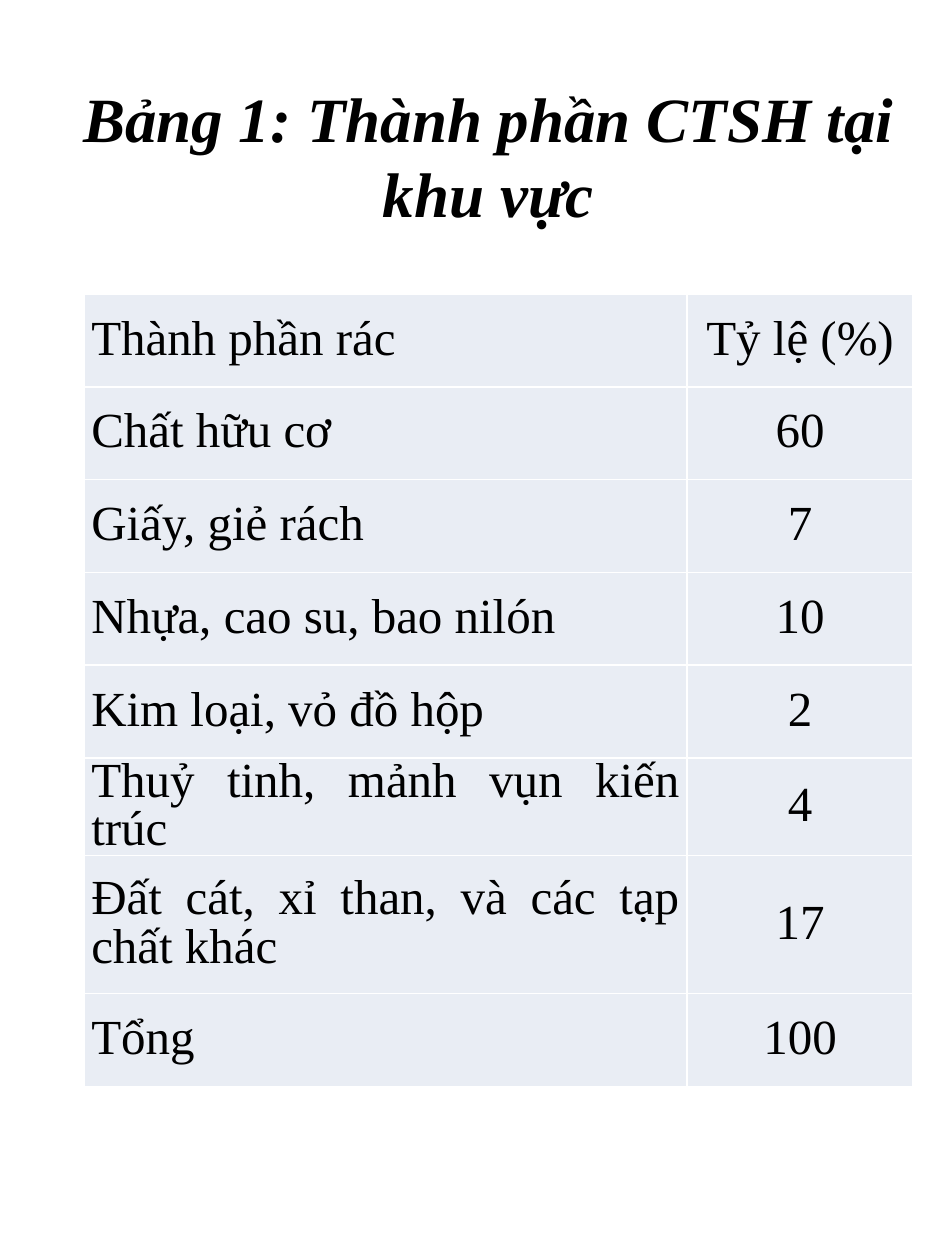
from dataclasses import dataclass

from lxml import etree
from pptx import Presentation
from pptx.dml import color
from pptx.enum import text
from pptx.oxml import ns
from pptx.util import Cm, Inches, Pt


@dataclass(frozen=True)
class Theme:
    font: str = "Times New Roman"
    ink: str = "000000"
    cell: str = "E9EDF4"
    border: str = "FFFFFF"
    title_size: int = 36
    cell_size: int = 28
    border_width: int = 1


@dataclass(frozen=True)
class WasteRow:
    component: str
    share: str
    height: float = 1.87


THEME = Theme()
COLUMN_WIDTHS = (12.16, 4.56)
COLUMN_ALIGNMENTS = (text.PP_ALIGN.JUSTIFY, text.PP_ALIGN.CENTER)
WASTE_ROWS = (
    WasteRow("Thành phần rác", "Tỷ lệ (%)"),
    WasteRow("Chất hữu cơ", "60"),
    WasteRow("Giấy, giẻ rách", "7"),
    WasteRow("Nhựa, cao su, bao nilón", "10"),
    WasteRow("Kim loại, vỏ đồ hộp", "2"),
    WasteRow("Thuỷ tinh, mảnh vụn kiến trúc", "4"),
    WasteRow("Đất cát, xỉ than, và các tạp chất khác", "17", 2.78),
    WasteRow("Tổng", "100"),
)


def apply(target, formats: dict) -> None:
    for name, value in formats.items():
        setattr(target, name, value)


def style_font(font, size: int, emphasis: bool = False) -> None:
    apply(font, {"name": THEME.font, "size": Pt(size),
                 "bold": emphasis, "italic": emphasis})
    font.color.rgb = color.RGBColor.from_string(THEME.ink)


def add_borders(cell) -> None:
    properties = cell._tc.get_or_add_tcPr()
    for side in ("lnL", "lnR", "lnT", "lnB"):
        line = etree.SubElement(properties, ns.qn(f"a:{side}"),
                                w=str(Pt(THEME.border_width)))
        fill = etree.SubElement(line, ns.qn("a:solidFill"))
        etree.SubElement(fill, ns.qn("a:srgbClr"), val=THEME.border)


def fill_cell(cell, wording: str, alignment: text.PP_ALIGN) -> None:
    cell.text = wording
    apply(cell, {"margin_left": Cm(0.15), "margin_right": Cm(0.15),
                 "margin_top": 0, "margin_bottom": 0,
                 "vertical_anchor": text.MSO_ANCHOR.MIDDLE})
    add_borders(cell)
    cell.fill.solid()
    cell.fill.fore_color.rgb = color.RGBColor.from_string(THEME.cell)
    paragraph = cell.text_frame.paragraphs[0]
    apply(paragraph, {"alignment": alignment, "line_spacing": 0.9,
                      "space_after": Pt(8)})
    style_font(paragraph.runs[0].font, THEME.cell_size)


def add_heading(slide, wording: str) -> None:
    heading = slide.shapes.title
    apply(heading, {"left": Cm(1.27), "top": Cm(1.6),
                    "width": Cm(17.15), "height": Cm(4.33)})
    frame = heading.text_frame
    frame.text = wording
    apply(frame, {"word_wrap": True, "auto_size": text.MSO_AUTO_SIZE.NONE,
                  "vertical_anchor": text.MSO_ANCHOR.TOP, "margin_top": 0})
    paragraph = frame.paragraphs[0]
    paragraph.alignment = text.PP_ALIGN.CENTER
    style_font(paragraph.runs[0].font, THEME.title_size, emphasis=True)


def add_waste_table(slide, rows: tuple[WasteRow, ...]) -> None:
    composition = slide.shapes.add_table(
        len(rows), len(COLUMN_WIDTHS), Cm(1.69), Cm(5.93),
        Cm(sum(COLUMN_WIDTHS)), Cm(sum(row.height for row in rows))).table
    apply(composition, {"first_row": False, "horz_banding": False})
    for column, width in zip(composition.columns, COLUMN_WIDTHS):
        column.width = Cm(width)
    for table_row, waste in zip(composition.rows, rows):
        table_row.height = Cm(waste.height)
        for cell, wording, alignment in zip(
                table_row.cells, (waste.component, waste.share), COLUMN_ALIGNMENTS):
            fill_cell(cell, wording, alignment)


def main() -> None:
    deck = Presentation()
    apply(deck, {"slide_width": Inches(7.5), "slide_height": Inches(10)})
    slide = deck.slides.add_slide(deck.slide_layouts.get_by_name("Title Only"))
    add_heading(slide, "Bảng 1: Thành phần CTSH tại khu vực")
    add_waste_table(slide, WASTE_ROWS)
    deck.save("out.pptx")


if __name__ == "__main__":
    main()
